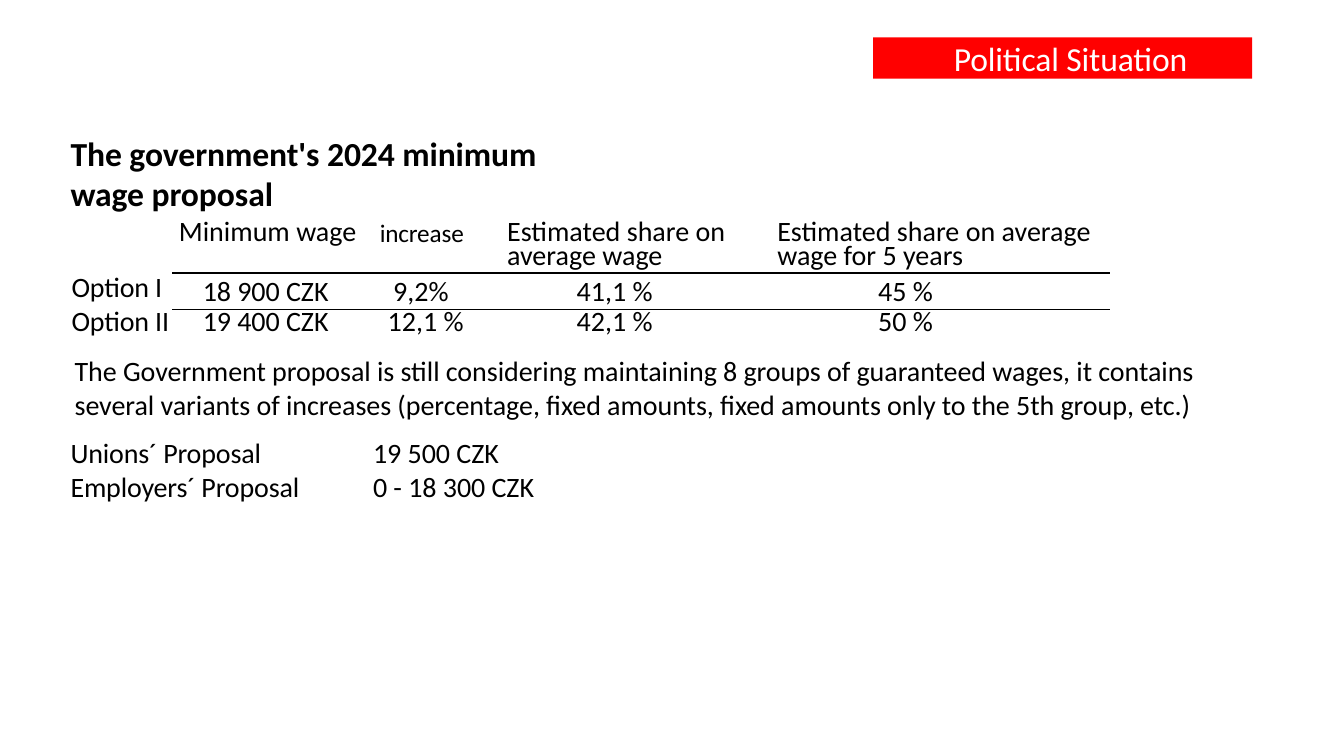
from lxml import etree
from pptx import Presentation, util as u
from pptx.dml.color import RGBColor
from pptx.enum import shapes, text
from pptx.oxml.ns import qn

HUES = {"ink": "000000", "paper": "FFFFFF", "alert": "FF0000"}
PLAIN = "{2D5ABB26-0587-4C30-8999-92F81FD0307C}"
MID, END = text.PP_ALIGN.CENTER, text.PP_ALIGN.RIGHT


class Deck:
    face = "Calibri"

    def __init__(self):
        self.file = Presentation()
        self.file.slide_width = u.Inches(13.33)
        self.file.slide_height = u.Inches(7.5)
        self.slide = self.file.slides.add_slide(self.file.slide_layouts[6])

    def hue(self, name):
        return RGBColor.from_string(HUES[name])

    def para(self, para, words, size=20, hue="ink", bold=False, gap=0,
             dent=0, pitch=None, align=None, track=0):
        para.text = words
        font = para.font
        font.name, font.size, font.bold = self.face, u.Pt(size), bold
        font.color.rgb = self.hue(hue)
        para.space_before = u.Pt(gap)
        if pitch:
            para.line_spacing = u.Pt(pitch)
        if align:
            para.alignment = align
        props = para._p.get_or_add_pPr()
        props.set("marL", str(u.Inches(dent)))
        props.set("indent", "0")
        props.find(qn("a:defRPr")).set("spc", str(track))

    def fill(self, frame, lines, gap=0, **style):
        frame.word_wrap = True
        frame.vertical_anchor = text.MSO_ANCHOR.TOP
        frame.margin_left = frame.margin_right = frame.margin_bottom = 0
        frame.margin_top = u.Inches(0.01)
        for i, words in enumerate(lines):
            para = frame.add_paragraph() if i else frame.paragraphs[0]
            self.para(para, words, gap=0 if i else gap, **style)

    def note(self, box, *lines, **style):
        item = self.slide.shapes.add_textbox(*map(u.Inches, box))
        self.fill(item.text_frame, lines, **style)

    def badge(self, box, words, **style):
        item = self.slide.shapes.add_shape(
            shapes.MSO_SHAPE.RECTANGLE, *map(u.Inches, box))
        item.shadow.inherit = False
        item.fill.solid()
        item.fill.fore_color.rgb = self.hue("alert")
        item.line.fill.background()
        self.fill(item.text_frame, [words], align=text.PP_ALIGN.LEFT, **style)

    def edge(self, cell, side):
        line = etree.Element(qn("a:" + side), w=str(u.Pt(1.5)))
        paint = etree.SubElement(line, qn("a:solidFill"))
        etree.SubElement(paint, qn("a:srgbClr"), val=HUES["ink"])
        cell._tc.get_or_add_tcPr().insert(0, line)

    def table(self, box, wides, highs, rows, styles):
        grid = self.slide.shapes.add_table(
            len(highs), len(wides), *map(u.Inches, box)).table
        grid.first_row = grid.horz_banding = False
        grid._tbl.tblPr.find(qn("a:tableStyleId")).text = PLAIN
        for col, wide in zip(grid.columns, wides):
            col.width = u.Inches(wide)
        for r, high in enumerate(highs):
            grid.rows[r].height = u.Inches(high)
            for c, words in enumerate(rows[r]):
                cell = grid.cell(r, c)
                style = styles(r, c)
                cell.fill.background()
                cell.margin_left = cell.margin_bottom = 0
                cell.margin_right = u.Inches(style.pop("inset", 0))
                cell.margin_top = u.Inches(0.02 if r == 1 and c else 0)
                self.para(cell.text_frame.paragraphs[0], words, **style)
                if c and r < 2:
                    self.edge(cell, "lnB")
                if c and r:
                    self.edge(cell, "lnT")


def look(r, c):
    if r == 0:
        style = [dict(), dict(align=MID, inset=0.08),
                 dict(align=END, inset=0.21, size=18, track=-10),
                 dict(dent=0.22), dict(dent=0.13)][c]
        return dict(style, pitch=16.9)
    style = [dict(dent=0.03, track=-15),
             dict(align=MID, inset=0.12, track=-5),
             dict(dent=0.22) if r == 1 else dict(align=END, inset=0.21),
             dict(dent=0.91), dict(dent=1.13)][c]
    if r == 2:
        return dict(style, pitch=21)
    return dict(style, gap=1.1) if c else dict(style, pitch=23)


def main():
    deck = Deck()
    deck.note((0.69, 1.31, 4.69, 0.82),
              "The government's 2024 minimum wage proposal",
              size=24, bold=True, gap=1.1, dent=0.01, track=-5)
    deck.table(
        (0.68, 2.24, 10.33, 1.14),
        (1.03, 1.97, 1.13, 2.77, 3.43), (0.47, 0.36, 0.31),
        (("", "Minimum wage", "increase", "Estimated share on average wage",
          "Estimated share on average wage for 5 years"),
         ("Option I", "18 900 CZK", "9,2%", "41,1 %", "45 %"),
         ("Option II", "19 400 CZK", "12,1 %", "42,1 %", "50 %")), look)
    deck.note((0.74, 3.5, 11.65, 0.7),
              "The Government proposal is still considering maintaining 8 "
              "groups of guaranteed wages, it contains several variants of "
              "increases (percentage, fixed amounts, fixed amounts only to "
              "the 5th group, etc.)", track=-5)
    deck.note((0.69, 4.31, 2.53, 0.7), "Unions´ Proposal",
              "Employers´ Proposal", gap=1, dent=0.01, track=-15)
    deck.note((3.69, 4.31, 1.62, 0.7), "19 500 CZK", "0 - 18 300 CZK",
              gap=1, dent=0.01, track=-5)
    deck.badge((8.66, 0.37, 3.76, 0.41), "Political Situation",
               size=24, hue="paper", gap=0.5, dent=0.8, track=-10)
    deck.file.save("out.pptx")


if __name__ == "__main__":
    main()
